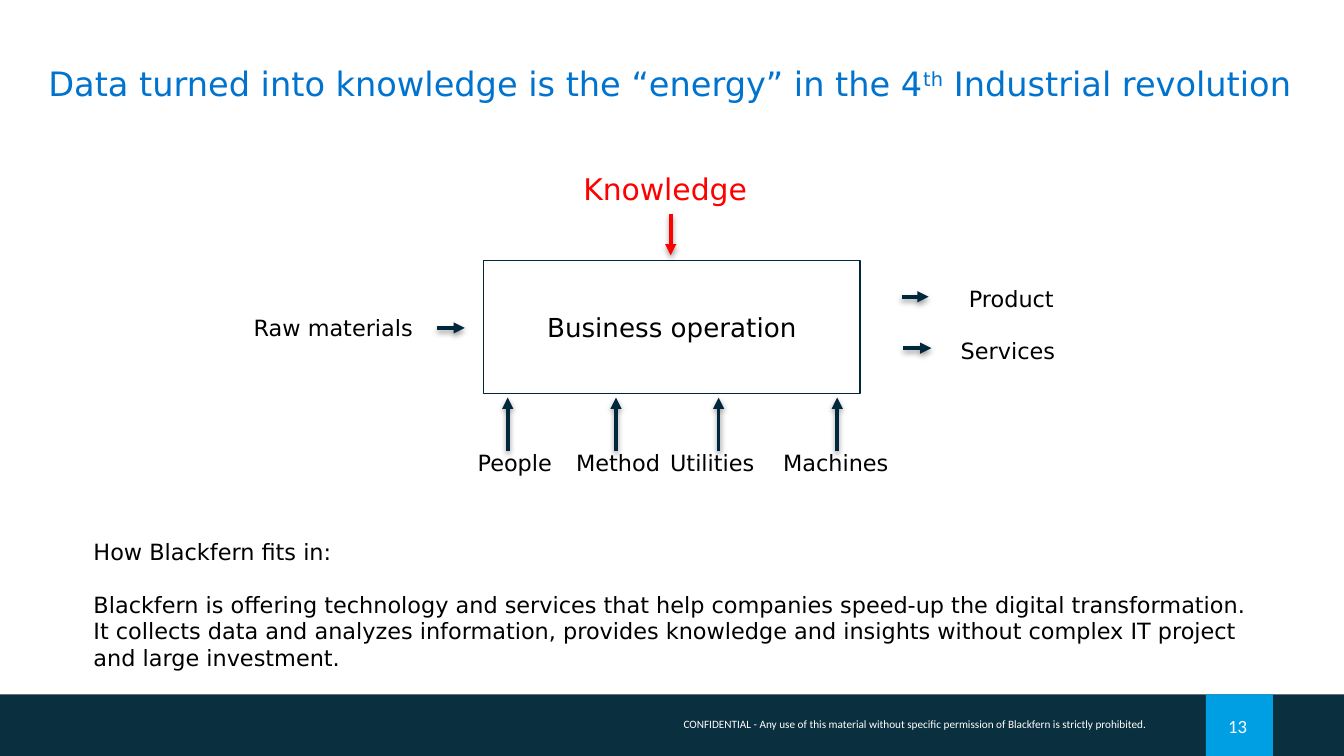
from lxml import etree
from pptx import Presentation
from pptx.dml.color import RGBColor
from pptx.enum import shapes, text
from pptx.oxml import ns
from pptx.util import Pt

COLORS = {
    "bar": "0A2F3F", "badge": "009FE3", "white": "FFFFFF", "title": "0073CF",
    "outline": "00273C", "arrow": "00283D", "black": "000000", "red": "FF0000",
}
LEFT, CENTER, RIGHT = text.PP_ALIGN.LEFT, text.PP_ALIGN.CENTER, text.PP_ALIGN.RIGHT
TOP, MIDDLE = text.MSO_ANCHOR.TOP, text.MSO_ANCHOR.MIDDLE
LABEL_SIZE = 72


def color(name):
    return RGBColor.from_string(COLORS[name])


class SlideBuilder:
    """Draws styled elements on one slide; all lengths are in points."""

    font = "DejaVu Sans"

    def __init__(self, page):
        self.page = page

    def fill_text(self, box, lines, size, ink="black", align=LEFT, anchor=TOP,
                  wrap=True, font=None):
        frame = box.text_frame
        frame.text = "\n".join(lines)
        frame.word_wrap = wrap
        frame.auto_size = text.MSO_AUTO_SIZE.NONE
        frame.vertical_anchor = anchor
        for para in frame.paragraphs:
            para.alignment = align
            for span in para.runs:
                self.style(span, size, ink, font)
        return frame

    def style(self, span, size, ink, font=None):
        span.font.name = font or self.font
        span.font.size = Pt(size)
        span.font.color.rgb = color(ink)

    def title(self, spans, left, top, width, height):
        box = self.page.shapes.title
        box.left, box.top, box.width, box.height = map(Pt, (left, top, width, height))
        frame = self.fill_text(box, [""], 18, wrap=False)
        for words, baseline in spans:
            span = frame.paragraphs[0].add_run()
            span.text = words
            self.style(span, 18, "title")
            if baseline:
                span.font._element.set("baseline", str(baseline * 1000))

    def rectangle(self, left, top, width, height, fill=None, line=None):
        box = self.page.shapes.add_shape(
            shapes.MSO_SHAPE.RECTANGLE, Pt(left), Pt(top), Pt(width), Pt(height))
        box.shadow.inherit = False
        if fill:
            box.fill.solid()
            box.fill.fore_color.rgb = color(fill)
        else:
            box.fill.background()
        if line:
            box.line.color.rgb = color(line)
            box.line.width = Pt(0.75)
        else:
            box.line.fill.background()
        return box

    def text_box(self, lines, left, top, width, height, size, **style):
        box = self.page.shapes.add_textbox(Pt(left), Pt(top), Pt(width), Pt(height))
        return self.fill_text(box, lines, size, **style)

    def label(self, words, x, y, size=12, ink="black", align=CENTER):
        """Unwrapped text in a square centred on x, y."""
        half = LABEL_SIZE / 2
        self.text_box([words], x - half, y - half, LABEL_SIZE, LABEL_SIZE, size,
                      ink=ink, align=align, anchor=MIDDLE, wrap=False)

    def arrow(self, x1, y1, x2, y2, ink="arrow"):
        line = self.page.shapes.add_connector(
            shapes.MSO_CONNECTOR.STRAIGHT, Pt(x1), Pt(y1), Pt(x2), Pt(y2))
        line.line.color.rgb = color(ink)
        line.line.width = Pt(2)
        stroke = line.line._get_or_add_ln()
        etree.SubElement(stroke, ns.qn("a:tailEnd"), type="triangle")
        effects = etree.SubElement(line._element.spPr, ns.qn("a:effectLst"))
        shadow = etree.SubElement(
            effects, ns.qn("a:outerShdw"), blurRad=str(Pt(3.1)), dist=str(Pt(1.6)),
            dir="5400000", rotWithShape="0")
        tint = etree.SubElement(shadow, ns.qn("a:srgbClr"), val=COLORS["black"])
        etree.SubElement(tint, ns.qn("a:alpha"), val="38000")


def main():
    deck = Presentation()
    deck.slide_width, deck.slide_height = Pt(720), Pt(405)
    slide = SlideBuilder(deck.slides.add_slide(deck.slide_layouts[5]))

    # Footer
    slide.rectangle(0, 372, 720, 33, fill="bar")
    slide.rectangle(646, 372, 36, 33, fill="badge")
    slide.text_box(
        ["CONFIDENTIAL - Any use of this material without specific permission of "
         "Blackfern is strictly prohibited."],
        217, 381, 404, 16, 6, ink="white", align=RIGHT, font="Calibri")
    slide.text_box(["13"], 642, 379.5, 42, 19, 10, ink="white", align=CENTER,
                   font="Calibri")

    # Title
    slide.title([("Data turned into knowledge is the “energy” in the 4", 0),
                 ("th", 30), (" Industrial revolution", 0)], 18.7, 30.2, 700, 29)

    # Central operation
    operation = slide.rectangle(259.2, 139.7, 201.6, 71.3, line="outline")
    slide.fill_text(operation, ["Business operation"], 14, align=CENTER, anchor=MIDDLE)

    # Knowledge from above
    slide.label("Knowledge", 356.4, 101, size=16, ink="red")
    slide.arrow(359.3, 114.5, 359.3, 136.8, ink="red")

    # Materials in, results out
    slide.label("Raw materials", 178.6, 175.7)
    slide.arrow(234, 175.7, 249, 175.7)
    slide.label("Product", 548, 160, align=LEFT)
    slide.arrow(483, 159, 497.5, 159)
    slide.label("Services", 540, 188)
    slide.arrow(484, 186.5, 499, 186.5)

    # Resources from below
    for words, label_x, arrow_x in (("People", 275.8, 272), ("Method", 331.2, 330),
                                    ("Utilities", 381.6, 385), ("Machines", 447.8, 448.5)):
        slide.label(words, label_x, 247.7)
        slide.arrow(arrow_x, 241.5, arrow_x, 213)

    # Explanation
    frame = slide.text_box(
        ["How Blackfern fits in:",
         "Blackfern is offering technology and services that help companies speed-up "
         "the digital transformation.",
         "It collects data and analyzes information, provides knowledge and insights "
         "without complex IT project and large investment."],
        43, 284.5, 649, 80, 12)
    frame.paragraphs[1].space_before = Pt(14)

    deck.save("out.pptx")


if __name__ == "__main__":
    main()
